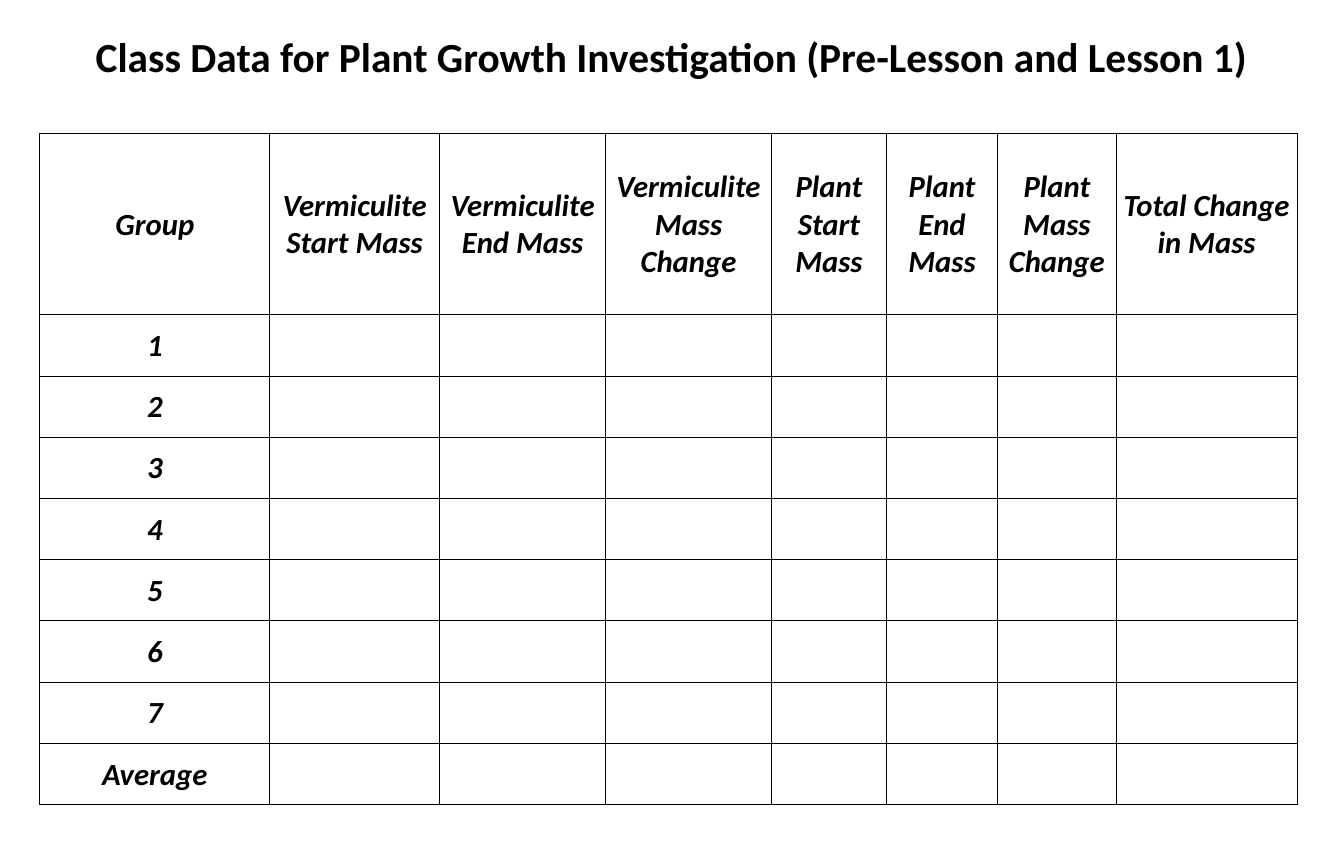
from dataclasses import dataclass

from lxml.etree import SubElement
from pptx import Presentation
from pptx.dml.color import RGBColor
from pptx.enum.text import MSO_ANCHOR, PP_ALIGN
from pptx.oxml.ns import qn
from pptx.util import Inches, Pt


@dataclass(frozen=True)
class Theme:
    font: str = "Calibri"
    ink: str = "000000"
    paper: str = "FFFFFF"
    title: int = 35
    body: int = 26
    rule: int = 1


class Sheet:
    def __init__(self, deck, theme):
        self.theme = theme
        self.slide = deck.slides.add_slide(deck.slide_layouts[5])

    def label(self, frame, text, size, italic=False):
        para = frame.paragraphs[0]
        para.alignment = PP_ALIGN.CENTER
        run = para.add_run()
        run.text = text
        font = run.font
        font.name = self.theme.font
        font.size = Pt(size)
        font.bold = True
        font.italic = italic
        font.color.rgb = RGBColor.from_string(self.theme.ink)

    def title(self, text, left, top, width, height):
        shape = self.slide.shapes.title
        shape.left, shape.top = Inches(left), Inches(top)
        shape.width, shape.height = Inches(width), Inches(height)
        frame = shape.text_frame
        frame.word_wrap = True
        frame.vertical_anchor = MSO_ANCHOR.MIDDLE
        frame.margin_left = frame.margin_right = Inches(0.15)
        frame.margin_top = frame.margin_bottom = Inches(0.07)
        self.label(frame, text, self.theme.title)

    def border(self, cell):
        props = cell._tc.get_or_add_tcPr()
        for side in ("lnL", "lnR", "lnT", "lnB"):
            line = SubElement(props, qn(f"a:{side}"), w=str(Pt(self.theme.rule)))
            fill = SubElement(line, qn("a:solidFill"))
            SubElement(fill, qn("a:srgbClr"), val=self.theme.ink)

    def cell(self, cell, text):
        self.border(cell)
        cell.fill.solid()
        cell.fill.fore_color.rgb = RGBColor.from_string(self.theme.paper)
        cell.vertical_anchor = MSO_ANCHOR.MIDDLE
        cell.margin_left = cell.margin_right = cell.margin_top = Inches(0.01)
        cell.margin_bottom = 0
        if text:
            self.label(cell.text_frame, text, self.theme.body, italic=True)

    def table(self, rows, left, top, widths, heights):
        frame = self.slide.shapes.add_table(
            len(rows), len(widths), Inches(left), Inches(top),
            Inches(sum(widths)), Inches(sum(heights)))
        grid = frame.table
        grid.first_row = grid.horz_banding = False
        for col, width in zip(grid.columns, widths):
            col.width = Inches(width)
        for row, height, texts in zip(grid.rows, heights, rows):
            row.height = Inches(height)
            for cell, text in zip(row.cells, texts):
                self.cell(cell, text)


def main():
    deck = Presentation()
    deck.slide_width, deck.slide_height = Inches(15.8), Inches(9.99)
    sheet = Sheet(deck, Theme())
    sheet.title("Class Data for Plant Growth Investigation (Pre-Lesson and Lesson 1)",
                0.79, 0.3, 14.22, 0.72)

    heads = ["Group", "Vermiculite Start Mass", "Vermiculite End Mass",
             "Vermiculite Mass Change", "Plant Start Mass", "Plant End Mass",
             "Plant Mass Change", "Total Change in Mass"]
    groups = [str(n) for n in range(1, 8)] + ["Average"]
    blank = [""] * (len(heads) - 1)
    rows = [heads] + [[group] + blank for group in groups]
    widths = [2.7, 2, 1.95, 1.95, 1.35, 1.31, 1.39, 2.13]
    heights = [2.13] + [0.72] * len(groups)
    sheet.table(rows, 0.47, 1.57, widths, heights)
    deck.save("out.pptx")


if __name__ == "__main__":
    main()
